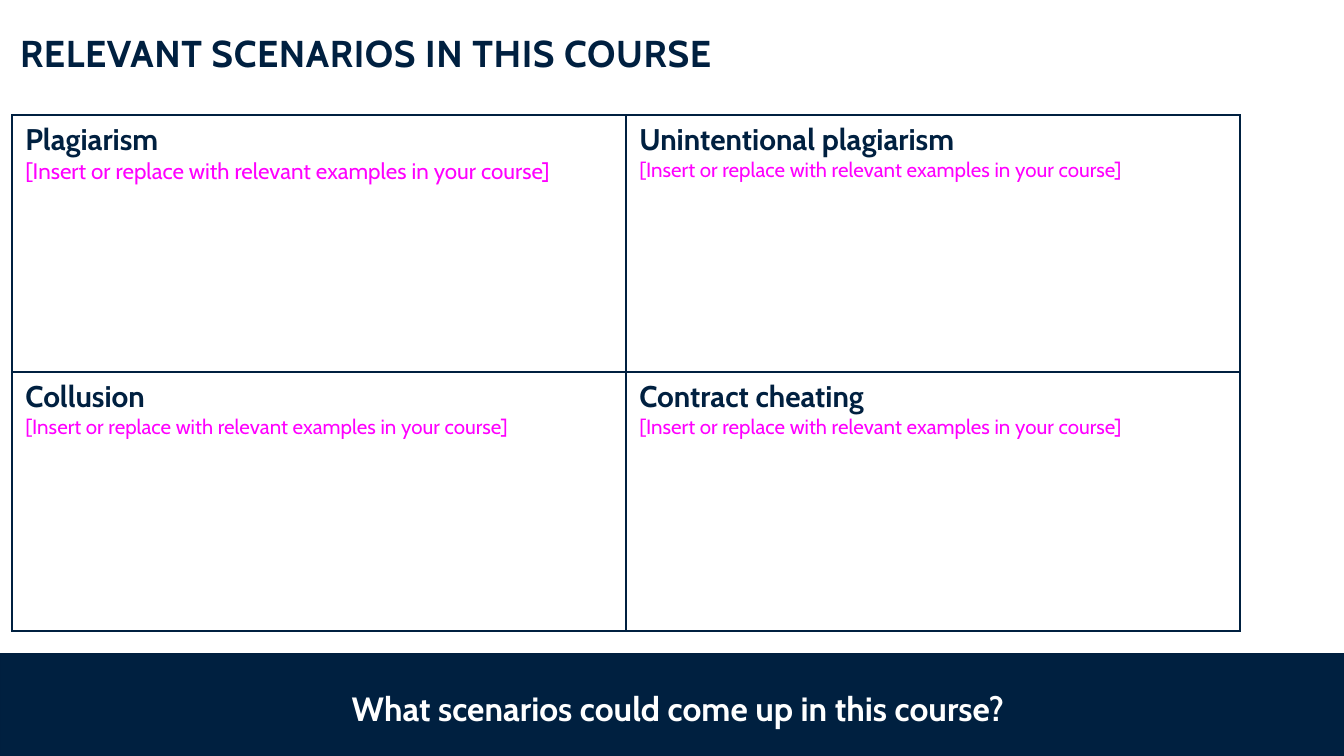
from lxml.etree import SubElement
from pptx import Presentation
from pptx.dml.color import RGBColor
from pptx.enum.shapes import MSO_SHAPE as SHAPE
from pptx.enum.text import MSO_ANCHOR as ANCHOR, PP_ALIGN as ALIGN
from pptx.oxml.ns import qn
from pptx.util import Emu, Pt

NAVY = RGBColor(0x00, 0x20, 0x40)
EDGE = RGBColor(0x00, 0x1F, 0x3F)
MAGENTA = RGBColor(0xFF, 0x00, 0xFF)
WHITE = RGBColor(0xFF, 0xFF, 0xFF)
FONT = "Cabin"
PX_PER_INCH = 134.4

PROMPT = "[Insert or replace with relevant examples in your course]"
# Heading and prompt size of each table cell
SCENARIOS = [
    [("Plagiarism", 12), ("Unintentional plagiarism", 11)],
    [("Collusion", 11), ("Contract cheating", 11)],
]
COLUMN_WIDTH = 614
ROW_HEIGHTS = [257, 259]


def px(n):
    return Emu(round(n * 914400 / PX_PER_INCH))


def write(p, text, size, color, bold=True):
    r = p.add_run()
    r.text = text
    p.font.name = FONT
    p.font.size = Pt(size)
    p.font.bold = bold
    p.font.color.rgb = color
    return r


def add_text(slide, x, y, w, h):
    tf = slide.shapes.add_textbox(px(x), px(y), px(w), px(h)).text_frame
    tf.word_wrap = True
    return tf


def set_borders(cell, color, width):
    tcPr = cell._tc.get_or_add_tcPr()
    for i, side in enumerate(("lnL", "lnR", "lnT", "lnB")):
        ln = tcPr.makeelement(qn(f"a:{side}"), {"w": str(Pt(width))})
        fill = SubElement(ln, qn("a:solidFill"))
        SubElement(fill, qn("a:srgbClr"), val=str(color))
        tcPr.insert(i, ln)


def add_title(slide):
    tf = add_text(slide, 20, 7, 1152, 91)
    tf.margin_left = tf.margin_right = tf.margin_top = tf.margin_bottom = 0
    tf.vertical_anchor = ANCHOR.MIDDLE
    r = write(tf.paragraphs[0], "RELEVANT SCENARIOS IN THIS COURSE", 20, NAVY)
    r._r.get_or_add_rPr().set("spc", "30")


def add_scenarios(slide):
    frame = slide.shapes.add_table(2, 2, px(12), px(115),
                                   px(2 * COLUMN_WIDTH), px(sum(ROW_HEIGHTS)))
    table = frame.table
    table.first_row = table.horz_banding = False
    for column in table.columns:
        column.width = px(COLUMN_WIDTH)
    for row, height, scenarios in zip(table.rows, ROW_HEIGHTS, SCENARIOS):
        row.height = px(height)
        for cell, (heading, size) in zip(row.cells, scenarios):
            cell.fill.background()
            set_borders(cell, NAVY, 1)
            tf = cell.text_frame
            write(tf.paragraphs[0], heading, 16, NAVY)
            write(tf.add_paragraph(), PROMPT, size, MAGENTA, bold=False)


def add_banner(slide):
    sp = slide.shapes.add_shape(SHAPE.RECTANGLE, px(0), px(654), px(1344), px(102))
    sp.shadow.inherit = False
    sp.fill.solid()
    sp.fill.fore_color.rgb = NAVY
    sp.line.color.rgb = EDGE
    sp.line.width = Pt(0.75)


def add_question(slide):
    p = add_text(slide, 64, 669, 1228, 173).paragraphs[0]
    p.alignment = ALIGN.CENTER
    p.line_spacing = 1.3
    write(p, "What scenarios could come up in this course?", 18, WHITE)


def main():
    prs = Presentation()
    prs.slide_width, prs.slide_height = px(1344), px(756)
    slide = prs.slides.add_slide(prs.slide_layouts[6])

    # Scenario grid
    add_scenarios(slide)
    # Closing question on its banner
    add_banner(slide)
    add_question(slide)
    # Heading
    add_title(slide)

    prs.save("out.pptx")


if __name__ == "__main__":
    main()
